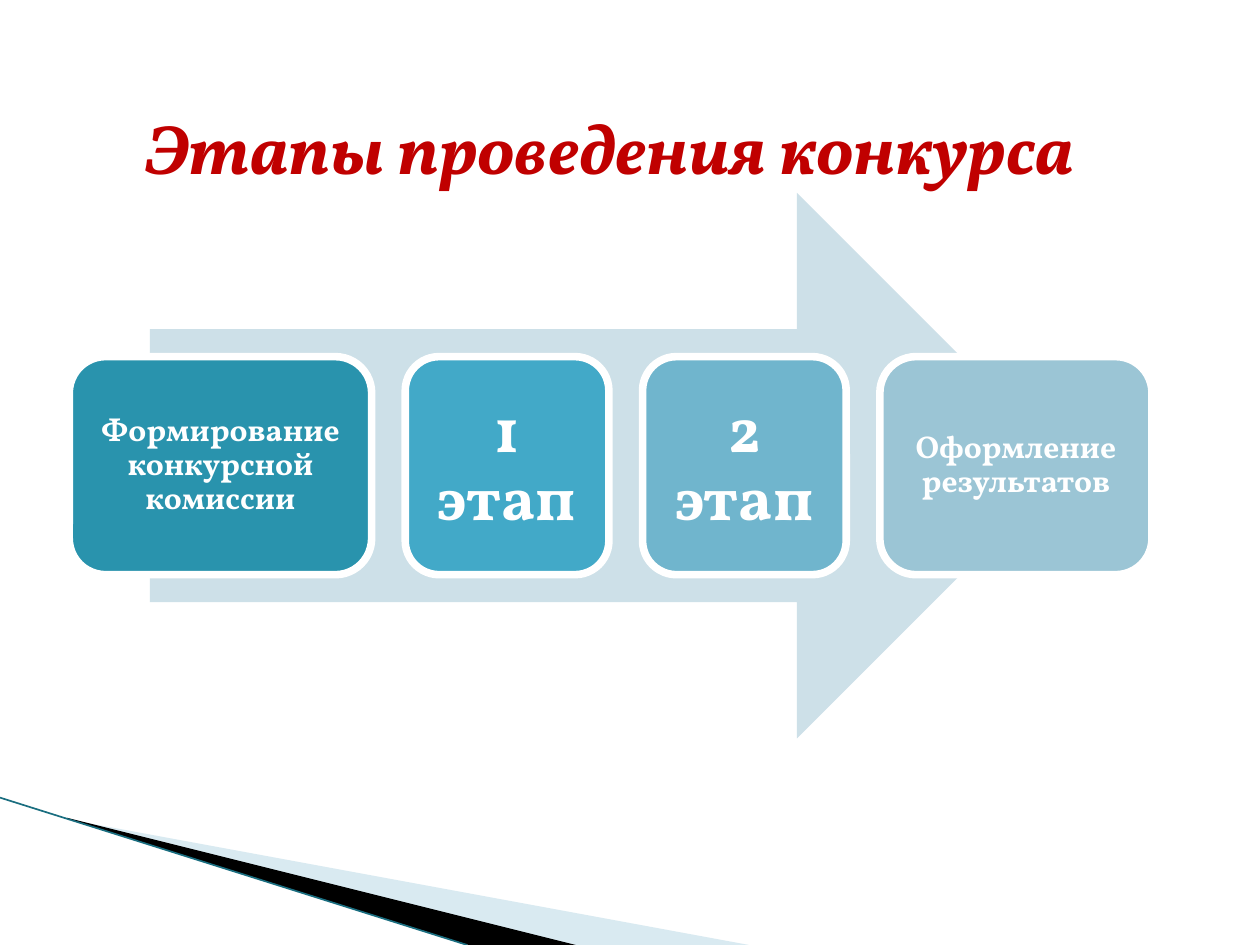
from lxml.etree import SubElement
from pptx import Presentation
from pptx.dml.color import RGBColor
from pptx.enum.shapes import MSO_CONNECTOR, MSO_SHAPE
from pptx.enum.text import MSO_ANCHOR, PP_ALIGN
from pptx.oxml.ns import qn
from pptx.util import Pt

WHITE = RGBColor(0xFF, 0xFF, 0xFF)
BLACK = RGBColor(0x00, 0x00, 0x00)
RED = RGBColor(0xC0, 0x00, 0x00)
PALE_BLUE = RGBColor(0xCD, 0xE0, 0xE8)
WEDGE_BLUE = RGBColor(0xA0, 0xCB, 0xDC)
EDGE_TEAL = RGBColor(0x1A, 0x6E, 0x80)
STAGE_1 = RGBColor(0x29, 0x93, 0xAD)
STAGE_2 = RGBColor(0x42, 0xA9, 0xC8)
STAGE_3 = RGBColor(0x70, 0xB5, 0xCD)
STAGE_4 = RGBColor(0x9B, 0xC5, 0xD5)


def paint(shape, color):
    shape.shadow.inherit = False
    shape.fill.solid()
    shape.fill.fore_color.rgb = color
    shape.line.fill.background()


def write(frame, text, color, font_format):
    frame.word_wrap = True
    paragraph = frame.paragraphs[0]
    paragraph.alignment = PP_ALIGN.CENTER
    run = paragraph.add_run()
    run.text = text
    run.font.color.rgb = color
    for name, value in font_format.items():
        setattr(run.font, name, value)
    return paragraph


deck = Presentation()
deck.slide_width, deck.slide_height = Pt(720), Pt(540)
slide = deck.slides.add_slide(deck.slide_layouts[6])
shapes = slide.shapes

wedges = [
    (WEDGE_BLUE, 40, [(39.6, 468.4), (428, 540), (328, 540), (39.6, 468)]),
    (BLACK, 100, [(38.2, 467.3), (329, 540), (267.8, 540), (38.9, 468)]),
]
for color, opacity, corners in wedges:
    points = [(Pt(x), Pt(y)) for x, y in corners]
    outline = shapes.build_freeform(*points[0])
    outline.add_line_segments(points[1:], close=True)
    wedge = outline.convert_to_shape()
    paint(wedge, color)
    if opacity < 100:
        tint = wedge.fill._xPr.find(".//" + qn("a:srgbClr"))
        SubElement(tint, qn("a:alpha"), val=str(opacity * 1000))

edge = shapes.add_connector(MSO_CONNECTOR.STRAIGHT, Pt(0), Pt(455.8), Pt(267), Pt(540))
edge.line.color.rgb = EDGE_TEAL
edge.line.width = Pt(0.95)
SubElement(edge._element.spPr, qn("a:effectLst"))

title = shapes.add_textbox(Pt(22.3), Pt(56.2), Pt(652.3), Pt(55.4))
write(title.text_frame, "Этапы проведения конкурса", RED,
      {"name": "Vollkorn", "size": Pt(40), "bold": True, "italic": True})

arrow = shapes.add_shape(MSO_SHAPE.RIGHT_ARROW, Pt(85.7), Pt(110.2), Pt(525.6), Pt(311.8))
paint(arrow, PALE_BLUE)

stages = [
    ("Формирование конкурсной комиссии", STAGE_1, 172.8, 18, 5),
    ("1 этап", STAGE_2, 116.4, 36, 10.8),
    ("2 этап", STAGE_3, 116.4, 36, 10.8),
    ("Оформление результатов", STAGE_4, 155.5, 18, 5),
]
left, gap = 39.6, 19.2
for text, color, width, size, inset in stages:
    stage = shapes.add_shape(MSO_SHAPE.ROUNDED_RECTANGLE, Pt(left), Pt(203.8), Pt(width), Pt(124.6))
    paint(stage, color)
    stage.line.color.rgb = WHITE
    stage.line.width = Pt(4.33)
    frame = stage.text_frame
    frame.vertical_anchor = MSO_ANCHOR.MIDDLE
    for side in ("left", "top", "right", "bottom"):
        setattr(frame, f"margin_{side}", Pt(inset))
    label = write(frame, text, WHITE, {"name": "Vollkorn", "size": Pt(size), "bold": True})
    label.line_spacing = 0.9
    left += width + gap

deck.save("out.pptx")
